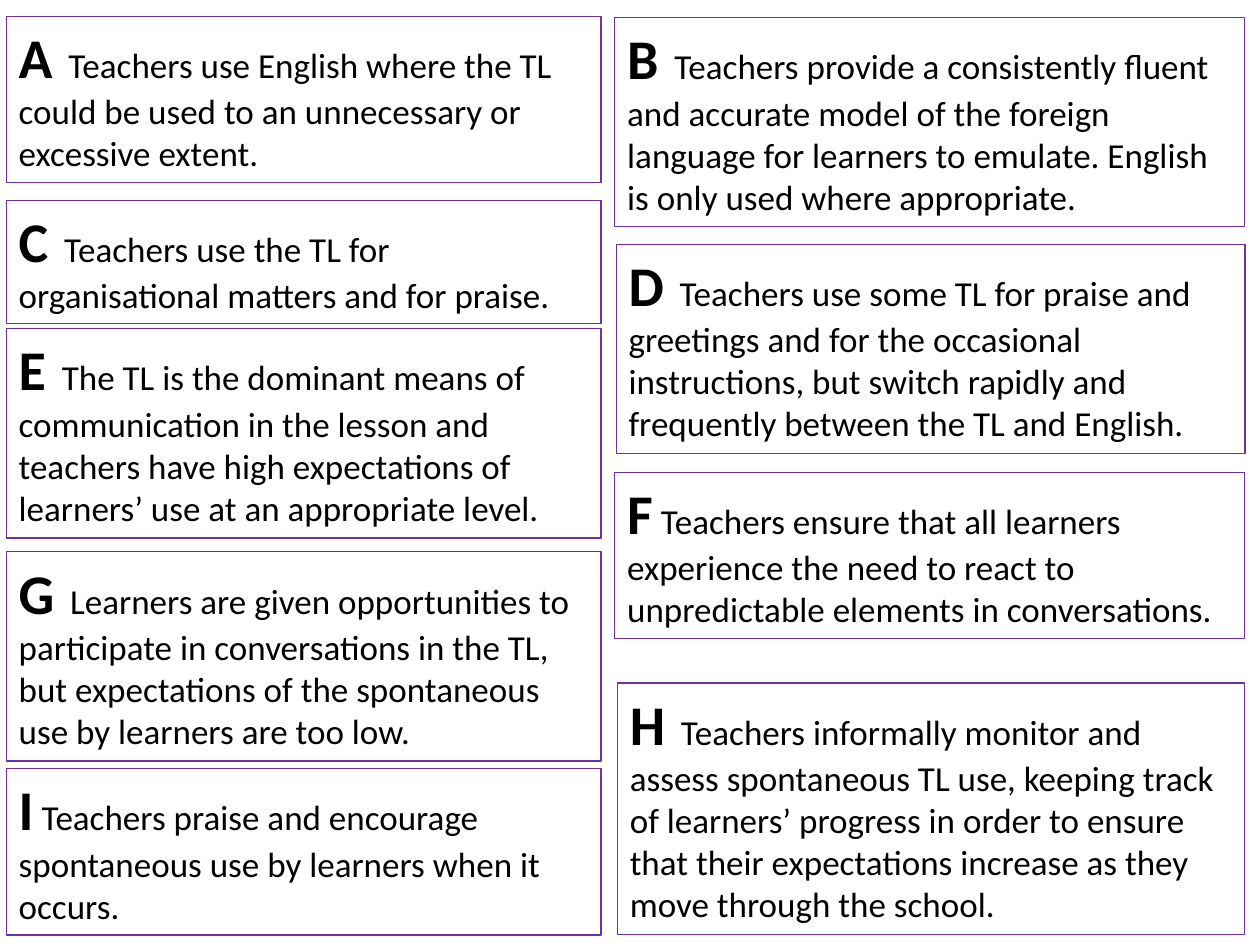
from dataclasses import dataclass

from pptx import Presentation
from pptx.dml.color import RGBColor
from pptx.enum.text import MSO_ANCHOR, MSO_AUTO_SIZE
from pptx.util import Inches, Pt

TOP = MSO_ANCHOR.TOP
GROW = MSO_AUTO_SIZE.SHAPE_TO_FIT_TEXT


@dataclass(frozen=True)
class Theme:
    font: str = "Calibri"
    ink: RGBColor = RGBColor(0, 0, 0)
    edge: RGBColor = RGBColor(0x70, 0x30, 0xA0)
    rule: Pt = Pt(0.75)
    big: Pt = Pt(32)
    body: Pt = Pt(20)


theme = Theme()

deck = Presentation()
deck.slide_width = Inches(10)
deck.slide_height = Inches(7.5)
slide = deck.slides.add_slide(deck.slide_layouts[6])

# Card columns: left edge, right edge
LEFT = (0.05, 4.77)
RIGHT = (4.88, 9.88)

# Card height: the first line is taller, each further line adds the same
FIRST, STEP = 0.64, 0.34

# Statements: letter, column, inset of left edge, top, lines, text
cards = [
    ("A", LEFT, 0, 0.13, 3,
     "  Teachers use English where the TL could be used to an unnecessary "
     "or excessive extent."),
    ("B", RIGHT, 0, 0.14, 4,
     "  Teachers provide a consistently fluent and accurate model of the "
     "foreign language for learners to emulate. English is only used where "
     "appropriate."),
    ("C", LEFT, 0, 1.59, 2,
     "  Teachers use the TL for organisational matters and for praise."),
    ("D", RIGHT, 0.01, 1.94, 4,
     "  Teachers use some TL for praise and greetings and for the occasional "
     "instructions, but switch rapidly and frequently between the TL and "
     "English."),
    ("E", LEFT, 0, 2.61, 4,
     "  The TL is the dominant means of communication in the lesson and "
     "teachers have high expectations of learners’ use at an appropriate "
     "level."),
    ("F", RIGHT, 0, 3.75, 3,
     " Teachers ensure that all learners experience the need to react to "
     "unpredictable elements in conversations."),
    ("G", LEFT, 0, 4.38, 4,
     "  Learners are given opportunities to participate in conversations in "
     "the TL, but expectations of the spontaneous use by learners are too "
     "low."),
    ("I", LEFT, 0, 6.1, 3,
     " Teachers praise and encourage spontaneous use by learners when it "
     "occurs."),
    ("H", RIGHT, 0.02, 5.42, 5,
     "  Teachers informally monitor and assess spontaneous TL use, keeping "
     "track of learners’ progress in order to ensure that their expectations "
     "increase as they move through the school."),
]

for letter, (start, end), inset, top, lines, words in cards:
    # Outlined box
    left = start + inset
    high = FIRST + STEP * (lines - 1)
    box = slide.shapes.add_textbox(
        Inches(left), Inches(top), Inches(end - left), Inches(high))
    box.line.color.rgb = theme.edge
    box.line.width = theme.rule

    # Large letter, then the statement
    frame = box.text_frame
    frame.word_wrap = True
    frame.auto_size = GROW
    frame.vertical_anchor = TOP
    para = frame.paragraphs[0]
    for text, size, bold in ((letter, theme.big, True),
                             (words, theme.body, False)):
        run = para.add_run()
        run.text = text
        run.font.name = theme.font
        run.font.size = size
        run.font.bold = bold
        run.font.color.rgb = theme.ink

deck.save("out.pptx")
